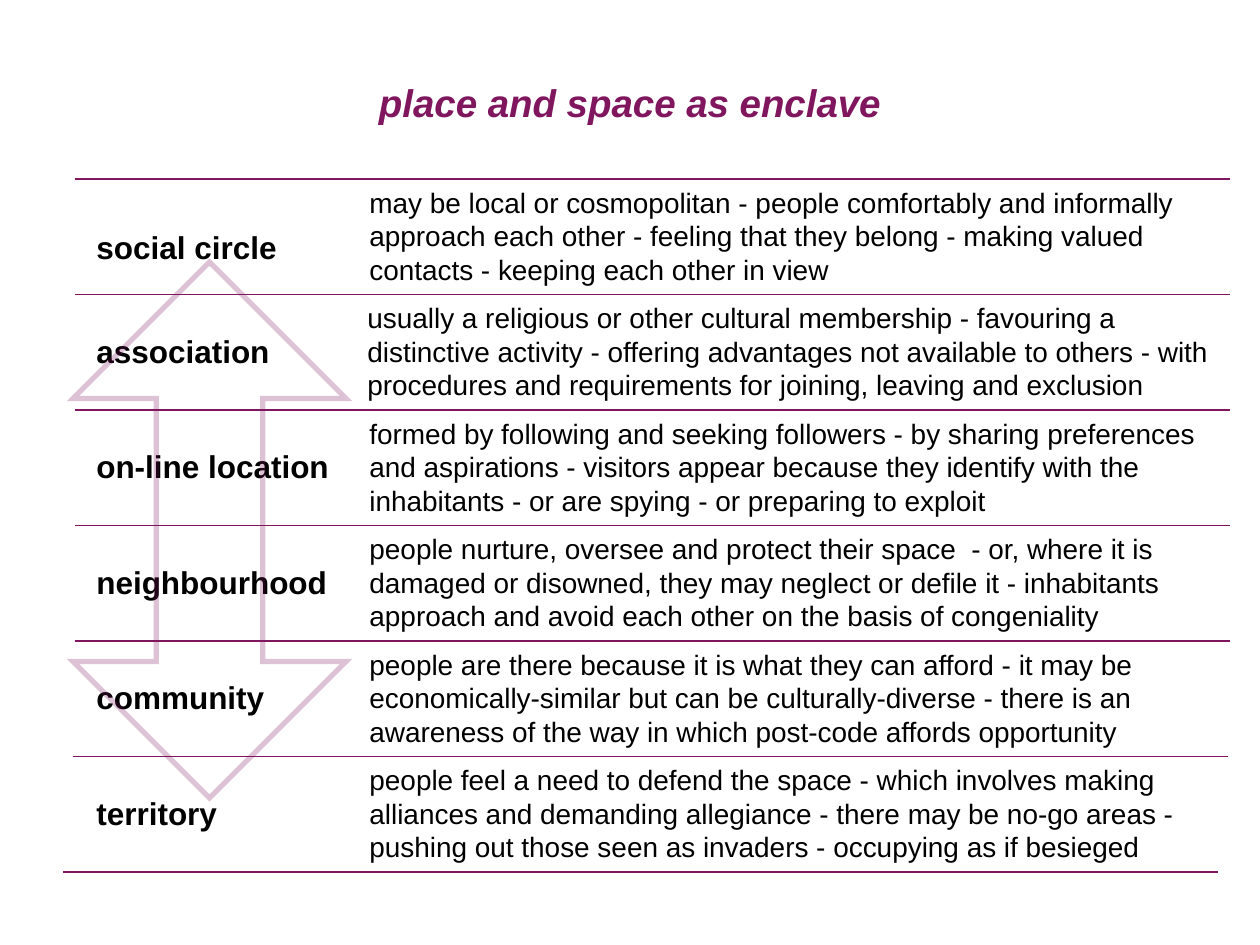
"""Build the slide on place and space as enclave."""
from lxml.etree import SubElement as Sub
from pptx import Presentation
from pptx.dml.color import RGBColor
from pptx.enum.shapes import MSO_CONNECTOR as Link, MSO_SHAPE as Shape
from pptx.enum.text import MSO_AUTO_SIZE as Fit, PP_ALIGN as Align
from pptx.oxml.ns import qn
from pptx.util import Pt

PX = 914400 / 126
PLUM = RGBColor(0x7F, 0x16, 0x5E)
BLACK = RGBColor(0, 0, 0)

HEAD = {"name": "Arial", "size": Pt(22), "bold": True, "italic": True}
LABEL = {"name": "Arial", "size": Pt(18), "bold": True}
BODY = {"name": "Arial", "size": Pt(16)}

TOP = 179
PITCH = 115.5
LEFTS = [75, 75, 75, 75, 75, 73, 63]
ROWS = [
    ("social circle", 43, 252, 357, 882,
     "may be local or cosmopolitan - people comfortably and informally "
     "approach each other - feeling that they belong - making valued "
     "contacts - keeping each other in view"),
    ("association", 31, 252, 355, 873,
     "usually a religious or other cultural membership - favouring a "
     "distinctive activity - offering advantages not available to others - "
     "with procedures and requirements for joining, leaving and exclusion"),
    ("on-line location", 31, 262, 357, 861,
     "formed by following and seeking followers - by sharing preferences "
     "and aspirations - visitors appear because they identify with the "
     "inhabitants - or are spying - or preparing to exploit"),
    ("neighbourhood", 31, 262, 357, 861,
     "people nurture, oversee and protect their space  - or, where it is "
     "damaged or disowned, they may neglect or defile it - inhabitants "
     "approach and avoid each other on the basis of congeniality"),
    ("community", 31, 252, 357, 924,
     "people are there because it is what they can afford - it may be "
     "economically-similar but can be culturally-diverse - there is an "
     "awareness of the way in which post-code affords opportunity"),
    ("territory", 31, 252, 357, 861,
     "people feel a need to defend the space - which involves making "
     "alliances and demanding allegiance - there may be no-go areas - "
     "pushing out those seen as invaders - occupying as if besieged"),
]


def px(*vals):
    """Turn px lengths into EMU."""
    return [round(val * PX) for val in vals]


def add_text(slide, box, text, style, color=BLACK, align=Align.LEFT):
    """Add a wrapped text box in one style."""
    frame = slide.shapes.add_textbox(*px(*box)).text_frame
    frame.word_wrap = True
    frame.auto_size = Fit.SHAPE_TO_FIT_TEXT
    para = frame.paragraphs[0]
    para.alignment = align
    run = para.add_run()
    run.text = text
    for key, val in style.items():
        setattr(run.font, key, val)
    run.font.color.rgb = color


def add_rule(slide, left, y):
    """Add a thin level rule."""
    rule = slide.shapes.add_connector(
        Link.STRAIGHT, *px(left, y, left + 1155, y))
    rule.line.color.rgb = PLUM
    rule.line.width = Pt(0.75)
    Sub(rule._element.spPr, qn("a:effectLst"))


def add_arrow(slide, box):
    """Add the faint outlined double arrow."""
    arrow = slide.shapes.add_shape(Shape.UP_DOWN_ARROW, *px(*box))
    arrow.shadow.inherit = False
    arrow.adjustments[0] = 0.63
    arrow.adjustments[1] = 0.39
    arrow.fill.background()
    arrow.line.color.rgb = PLUM
    arrow.line.width = Pt(3)
    edge = arrow.line._ln
    tint = edge.find(qn("a:solidFill"))[0]
    Sub(tint, qn("a:alpha"), val="25000")
    Sub(edge, qn("a:miter"), lim="800000")


def main():
    """Build and save the slide."""
    deck = Presentation()
    deck.slide_width, deck.slide_height = px(1260, 945)
    slide = deck.slides.add_slide(deck.slide_layouts[6])
    add_text(slide, (0, 73, 1260, 59), "place and space as enclave",
             HEAD, PLUM, Align.CENTER)
    for i, left in enumerate(LEFTS):
        add_rule(slide, left, TOP + i * PITCH)
    for i, (name, drop, wide, left, span, text) in enumerate(ROWS):
        y = TOP + i * PITCH
        add_text(slide, (84, y + drop, wide, 50), name, LABEL)
        add_text(slide, (left, y, span, 113), text, BODY)
    add_arrow(slide, (73, 262, 273, 536))
    deck.save("out.pptx")


if __name__ == "__main__":
    main()
